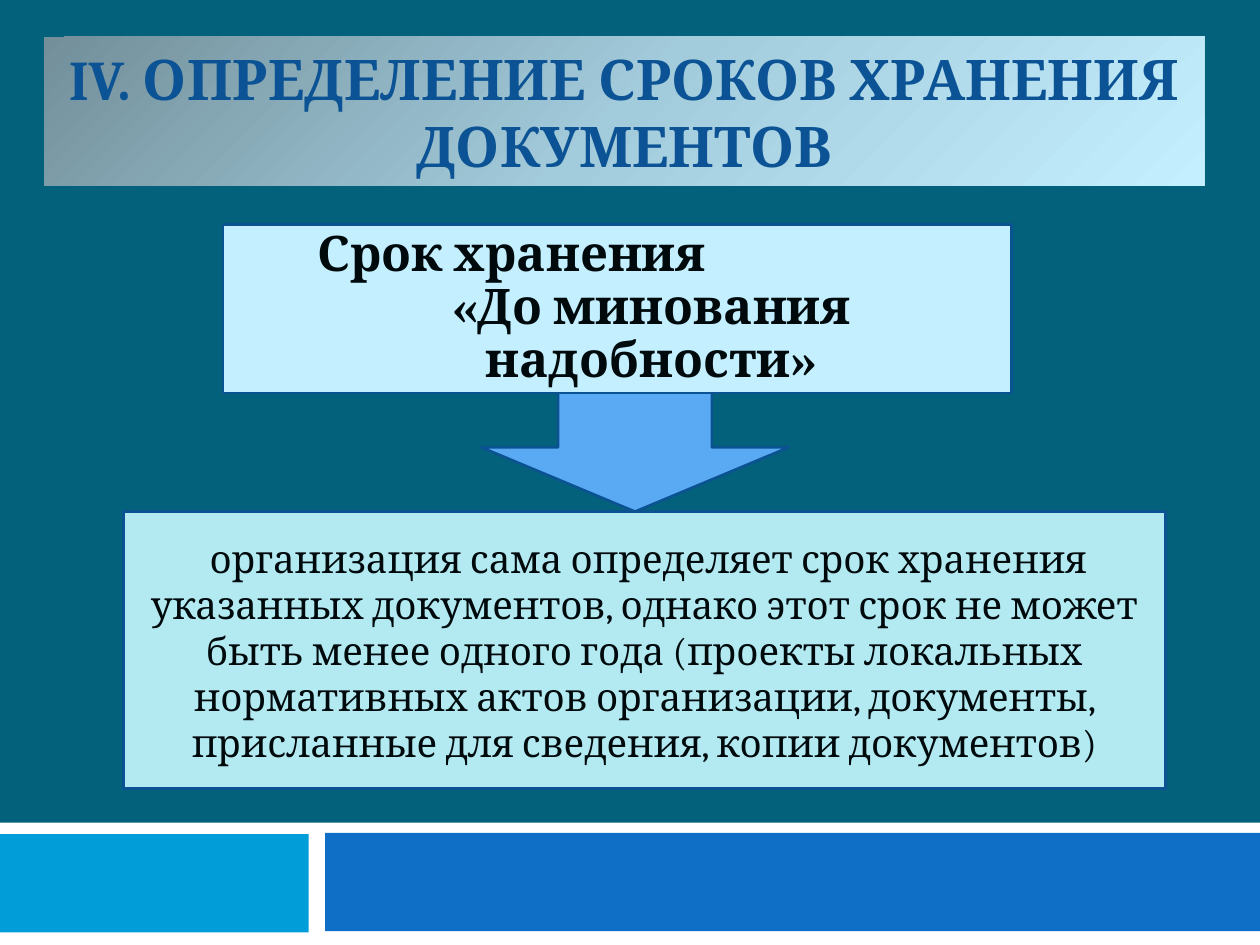
from copy import deepcopy

from pptx import Presentation
from pptx.dml.color import RGBColor
from pptx.enum.shapes import MSO_SHAPE as SHAPE
from pptx.enum.text import MSO_ANCHOR as ANCHOR, MSO_AUTO_SIZE as AUTO, PP_ALIGN as ALIGN
from pptx.oxml.ns import qn
from pptx.util import Inches, Pt

FONT = "Cambria"
C = {
    "back": "04617B", "white": "FFFFFF", "cyan": "009DD9", "blue": "0F6FC6",
    "title": "0B5394", "line": "0B5292", "text": "000A0C",
    "term": "C4EFFF", "arrow": "59AAF2", "rule": "B3EAF2",
    "grad_start": "728F9A", "grad_mid": "A2CBDB", "grad_end": "C4EFFF",
}


def rgb(name):
    return RGBColor.from_string(C[name])


def add_block(s, kind, box, fill, line=None):
    sp = s.shapes.add_shape(kind, *map(Inches, box))
    sp.shadow.inherit = False
    sp.fill.solid()
    sp.fill.fore_color.rgb = rgb(fill)
    if line:
        sp.line.color.rgb = rgb(line)
        sp.line.width = Pt(1.5)
    else:
        sp.line.fill.background()
    return sp


def add_run(p, text, size, color="text", bold=False):
    r = p.add_run()
    r.text = text
    r.font.name = FONT
    r.font.size = Pt(size)
    r.font.bold = bold
    r.font.color.rgb = rgb(color)


def setup_frame(sp, anchor):
    tf = sp.text_frame
    tf.word_wrap = True
    tf.auto_size = AUTO.NONE
    tf.vertical_anchor = anchor
    return tf


def fill_gradient(sp, names, angle):
    sp.fill.gradient()
    sp.fill.gradient_angle = angle
    stops = sp._element.spPr.find(qn("a:gradFill")).find(qn("a:gsLst"))
    stops.insert(1, deepcopy(stops[0]))
    for i, (stop, name) in enumerate(zip(sp.fill.gradient_stops, names)):
        stop.position = i / (len(names) - 1)
        stop.color.rgb = rgb(name)


def set_title(s, text):
    sp = s.shapes.title
    sp.left, sp.top, sp.width, sp.height = map(Inches, (0.35, 0.29, 9.21, 1.18))
    fill_gradient(sp, ("grad_start", "grad_mid", "grad_end"), 315)
    p = setup_frame(sp, ANCHOR.BOTTOM).paragraphs[0]
    p.alignment = ALIGN.CENTER
    add_run(p, text, 32, "title", True)


def add_footer_bands(s):
    for box, fill in (
        ((0, 6.53, 10, 0.97), "white"),
        ((0, 6.62, 2.45, 0.78), "cyan"),
        ((2.58, 6.61, 7.42, 0.78), "blue"),
    ):
        add_block(s, SHAPE.RECTANGLE, box, fill)


def add_rule_box(s):
    sp = add_block(s, SHAPE.RECTANGLE, (0.98, 4.06, 8.27, 2.2), "rule", "line")
    p = setup_frame(sp, ANCHOR.MIDDLE).paragraphs[0]
    p.alignment = ALIGN.CENTER
    add_run(p, " ", 20)
    add_run(p, "организация сама определяет срок хранения указанных документов, "
               "однако этот срок не может быть менее одного года (проекты "
               "локальных нормативных актов организации, документы, присланные "
               "для сведения, копии документов)", 22)


def add_term_box(s):
    sp = add_block(s, SHAPE.RECTANGLE, (1.77, 1.78, 6.26, 1.34), "term", "line")
    tf = setup_frame(sp, ANCHOR.MIDDLE)
    lines = (
        ("Срок хранения", ALIGN.LEFT, 0.65),
        ("«До минования надобности»", ALIGN.CENTER, 0.54),
    )
    for i, (text, align, indent) in enumerate(lines):
        p = tf.add_paragraph() if i else tf.paragraphs[0]
        p.alignment = align
        p.line_spacing = 0.9
        p._p.get_or_add_pPr().set("marL", str(Inches(indent)))
        add_run(p, text, 28, bold=True)


def main():
    prs = Presentation()
    prs.slide_width, prs.slide_height = Inches(10), Inches(7.5)
    s = prs.slides.add_slide(prs.slide_layouts[5])
    s.background.fill.solid()
    s.background.fill.fore_color.rgb = rgb("back")
    add_footer_bands(s)
    set_title(s, "IV. ОПРЕДЕЛЕНИЕ СРОКОВ ХРАНЕНИЯ ДОКУМЕНТОВ")
    add_rule_box(s)
    add_block(s, SHAPE.DOWN_ARROW, (3.82, 3.04, 2.44, 1.02), "arrow", "line")
    add_term_box(s)
    prs.save("out.pptx")


if __name__ == "__main__":
    main()
